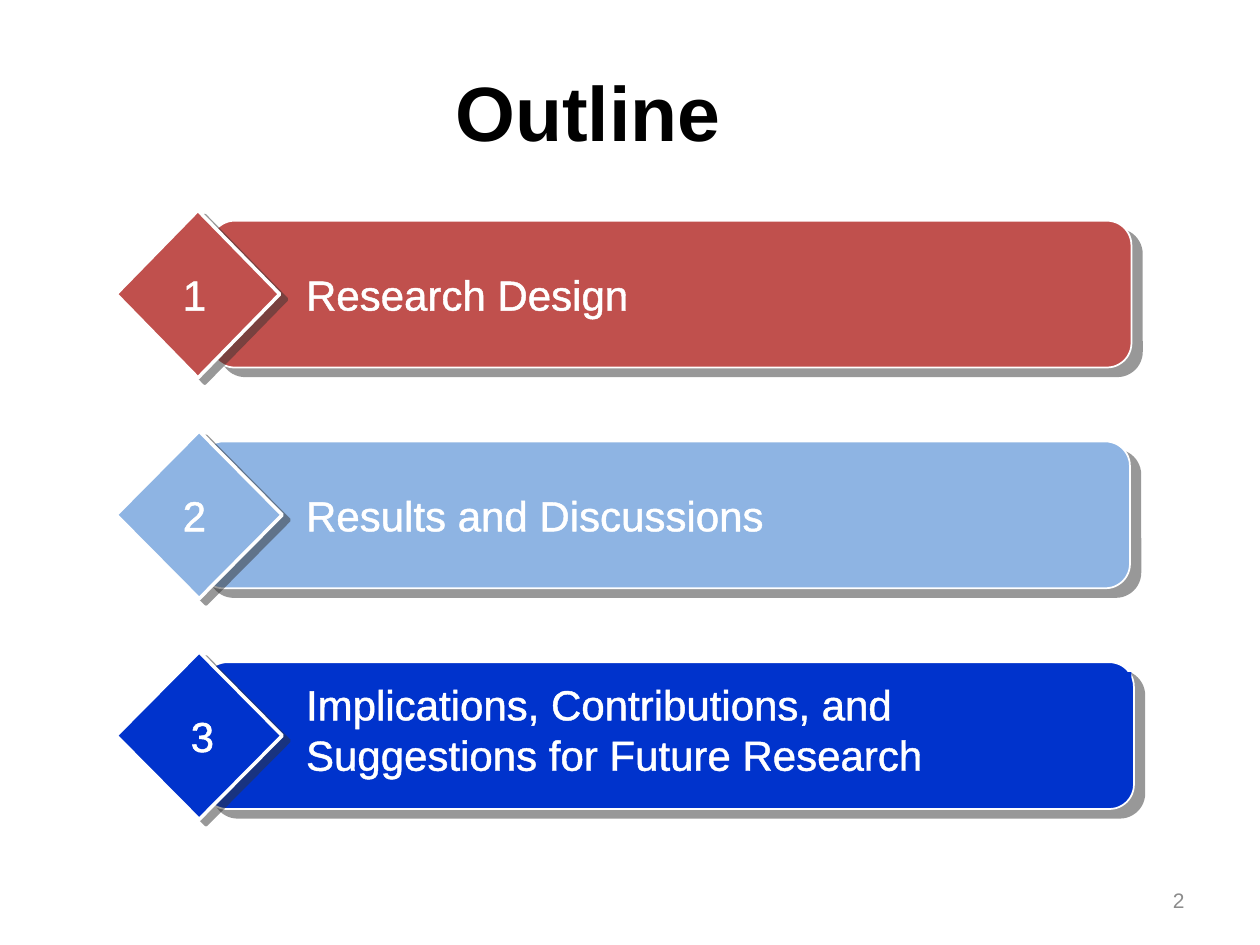
import pptx
import pptx.util
import pptx.dml.color
import pptx.enum.shapes
import pptx.enum.text
import pptx.oxml
import pptx.oxml.ns

Cm, Pt = pptx.util.Cm, pptx.util.Pt
SHAPE = pptx.enum.shapes.MSO_SHAPE
ALIGN = pptx.enum.text.PP_ALIGN
ANCHOR = pptx.enum.text.MSO_ANCHOR

COLORS = {
    "red": "C0504D",
    "light blue": "8EB4E3",
    "blue": "0033CC",
    "white": "FFFFFF",
    "black": "000000",
    "grey": "8C8C8C",
    "shadow": "333333",
}
ROW_TOP = ROW_PITCH = 4.45
BAR_HEIGHT = 2.96
DIAMOND_LEFT, DIAMOND_HEIGHT = 2.34, 3.38
NUMBER_WIDTH, LINE_HEIGHT = 1.07, 1.3
LABEL_LEFT = 5.92

ROWS = [
    {"label": "Research Design", "color": "red", "bar": (4.24, 22.81),
     "diamond": 3.3, "number": 3.92, "label_box": (0.84, 14.6, LINE_HEIGHT)},
    {"label": "Results and Discussions", "color": "light blue", "bar": (4.01, 22.78),
     "diamond": 3.35, "number": 3.92, "label_box": (0.84, 14.6, LINE_HEIGHT)},
    {"label": "Implications, Contributions, and Suggestions for Future Research",
     "color": "blue", "bar": (4.09, 22.86),
     "diamond": 3.35, "number": 4.08, "label_box": (0.2, 16.89, 2.31)},
]


def rgb(color):
    return pptx.dml.color.RGBColor.from_string(COLORS[color])


def color_xml(color, opacity=100):
    return (f'<a:srgbClr val="{COLORS[color]}">'
            f'<a:alpha val="{opacity * 1000}"/></a:srgbClr>')


class OutlineSlide:
    font = "Arial"

    def __init__(self, slide):
        self.slide = slide

    def add_text(self, frame, text, size, color, align, bold=False, outlined=False,
                 **frame_format):
        for key, value in {"word_wrap": True, **frame_format}.items():
            setattr(frame, key, value)
        paragraph = frame.paragraphs[0]
        paragraph.alignment = align
        run = paragraph.add_run()
        run.text = text
        for key, value in {"name": self.font, "size": Pt(size), "bold": bold}.items():
            setattr(run.font, key, value)
        run.font.color.rgb = rgb(color)
        if outlined:
            run.font._element.insert(0, pptx.oxml.parse_xml(
                f'<a:ln {pptx.oxml.ns.nsdecls("a")} w="{Pt(1.45)}">'
                f'<a:solidFill>{color_xml(color)}</a:solidFill></a:ln>'))

    def title(self, text, box):
        title = self.slide.shapes.title
        for key, value in zip(("left", "top", "width", "height"), box):
            setattr(title, key, Cm(value))
        self.add_text(title.text_frame, text, 44, "black", ALIGN.CENTER, bold=True,
                      vertical_anchor=ANCHOR.MIDDLE)

    def block(self, group, preset, box, color):
        block = group.shapes.add_shape(preset, *map(Cm, box))
        block.shadow.inherit = False
        block.fill.solid()
        block.fill.fore_color.rgb = rgb(color)
        block.line.fill.background()
        return block

    def raised(self, group, preset, box, color, line, distance, angle):
        """Add a block with a white edge and a hard offset shadow."""
        block = self.block(group, preset, box, color)
        block.line.color.rgb = rgb("white")
        block.line.width = Pt(line)
        effects = block._element.spPr.find(pptx.oxml.ns.qn("a:effectLst"))
        effects.append(pptx.oxml.parse_xml(
            f'<a:outerShdw {pptx.oxml.ns.nsdecls("a")} blurRad="0" dist="{Pt(distance)}" '
            f'dir="{angle * 60000}" algn="ctr" rotWithShape="0">'
            f'{color_xml("shadow", 50)}</a:outerShdw>'))

    def caption(self, group, text, box, color, align):
        caption = self.block(group, SHAPE.RECTANGLE, box, color)
        self.add_text(caption.text_frame, text, 24, "white", align, outlined=True,
                      vertical_anchor=ANCHOR.TOP,
                      margin_left=Cm(0.25 if align == ALIGN.LEFT else 0), margin_right=0)

    def row(self, index, row):
        group = self.slide.shapes.add_group_shape()
        top = ROW_TOP + index * ROW_PITCH
        color = row["color"]
        left, right = row["bar"]
        self.raised(group, SHAPE.ROUNDED_RECTANGLE,
                    (left, top, right - left, BAR_HEIGHT), color, 1, 7.8, 40)
        self.raised(group, SHAPE.DIAMOND,
                    (DIAMOND_LEFT, top + (BAR_HEIGHT - DIAMOND_HEIGHT) / 2,
                     row["diamond"], DIAMOND_HEIGHT), color, 2, 5, 37)
        offset, width, height = row["label_box"]
        self.caption(group, row["label"], (LABEL_LEFT, top + offset, width, height),
                     color, ALIGN.LEFT)
        self.caption(group, str(index + 1),
                     (row["number"] - NUMBER_WIDTH / 2, top + 0.84, NUMBER_WIDTH, LINE_HEIGHT),
                     color, ALIGN.CENTER)

    def page_number(self, text, box):
        page = self.slide.shapes.add_textbox(*map(Cm, box))
        self.add_text(page.text_frame, text, 12, "grey", ALIGN.RIGHT,
                      vertical_anchor=ANCHOR.MIDDLE)


def main():
    deck = pptx.Presentation()
    deck.slide_width, deck.slide_height = Cm(25.4), Cm(19.05)
    slide = deck.slides.add_slide(deck.slide_layouts[0])
    subtitle = slide.placeholders[1]._element
    subtitle.getparent().remove(subtitle)

    outline = OutlineSlide(slide)
    outline.title("Outline", (1.06, 0.64, 21.59, 3.18))
    for index, row in enumerate(ROWS):
        outline.row(index, row)
    outline.page_number("2", (18.2, 17.65, 5.93, 1.01))
    deck.save("out.pptx")


if __name__ == "__main__":
    main()
